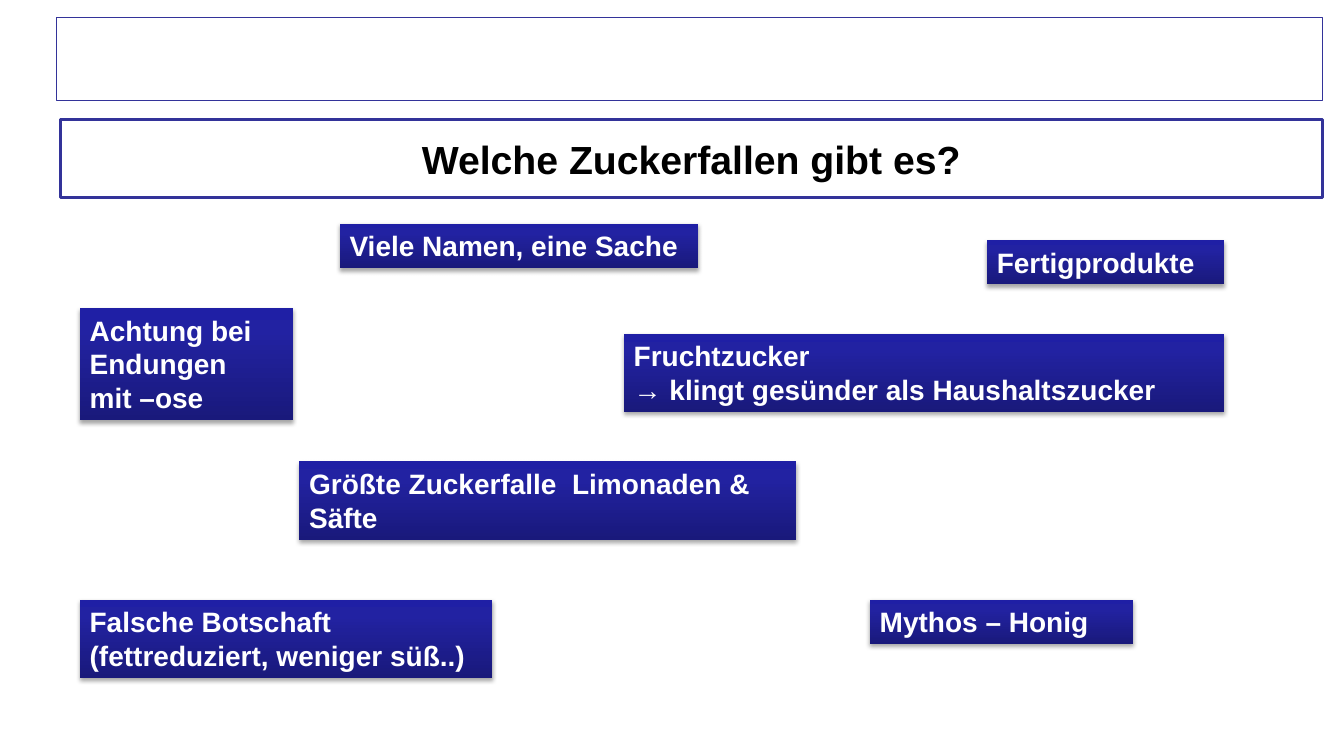
import copy
import dataclasses

import lxml.etree
import pptx
import pptx.dml.color
import pptx.enum.shapes
import pptx.enum.text
import pptx.oxml.ns
import pptx.shapes.autoshape
import pptx.slide
import pptx.util

COLOURS = {
    "white": "FFFFFF",
    "black": "000000",
    "border": "333399",
    "dark": "19197B",
    "middle": "2222A2",
    "light": "1F1FA5",
}
GRADIENT = ((0, "dark"), (0.8, "middle"), (1, "light"))
LINE_HEIGHT = 0.85
VERTICAL_PADDING = 0.27


@dataclasses.dataclass(frozen=True)
class SugarTrap:
    left: float
    top: float
    width: float
    lines: int
    paragraphs: tuple[str, ...]


SUGAR_TRAPS = (
    SugarTrap(7.54, 11.63, 12.52, 2, ("Größte Zuckerfalle  Limonaden & Säfte",)),
    SugarTrap(8.56, 5.64, 9.04, 1, ("Viele Namen, eine Sache",)),
    SugarTrap(2.01, 7.77, 5.38, 3, ("Achtung bei Endungen", "mit –ose")),
    SugarTrap(2.01, 15.11, 10.39, 2, ("Falsche Botschaft (fettreduziert, weniger süß..)",)),
    SugarTrap(24.87, 6.05, 5.99, 1, ("Fertigprodukte",)),
    SugarTrap(21.92, 15.11, 6.63, 1, ("Mythos – Honig",)),
    SugarTrap(15.72, 8.41, 15.14, 2, ("Fruchtzucker", "→ klingt gesünder als Haushaltszucker")),
)


def colour(name: str) -> pptx.dml.color.RGBColor:
    return pptx.dml.color.RGBColor.from_string(COLOURS[name])


def add_box(
    page: pptx.slide.Slide, left: float, top: float, width: float, height: float
) -> pptx.shapes.autoshape.Shape:
    box = page.shapes.add_shape(
        pptx.enum.shapes.MSO_SHAPE.RECTANGLE,
        *(pptx.util.Cm(length) for length in (left, top, width, height)),
    )
    box.shadow.inherit = False
    box.fill.background()
    box.line.fill.background()
    return box


def set_border(box: pptx.shapes.autoshape.Shape, points: float) -> None:
    box.line.color.rgb = colour("border")
    box.line.width = pptx.util.Pt(points)


def write_text(
    box: pptx.shapes.autoshape.Shape,
    paragraphs: tuple[str, ...],
    size: int,
    font_colour: str,
    alignment: pptx.enum.text.PP_ALIGN,
    frame_format: dict[str, object],
) -> None:
    frame = box.text_frame
    for name, value in {"word_wrap": True, **frame_format}.items():
        setattr(frame, name, value)
    font_format = {"name": "Arial", "size": pptx.util.Pt(size), "bold": True}
    for index, text in enumerate(paragraphs):
        para = frame.paragraphs[0] if index == 0 else frame.add_paragraph()
        para.alignment = alignment
        span = para.add_run()
        span.text = text
        for name, value in font_format.items():
            setattr(span.font, name, value)
        span.font.color.rgb = colour(font_colour)


def fill_gradient(box: pptx.shapes.autoshape.Shape) -> None:
    box.fill.gradient()
    box.fill.gradient_angle = 90
    stop_list = box.fill._xPr.find(".//" + pptx.oxml.ns.qn("a:gsLst"))
    stop_list.append(copy.deepcopy(stop_list[-1]))
    for stop, (position, name) in zip(box.fill.gradient_stops, GRADIENT):
        stop.position = position
        stop.color.rgb = colour(name)


def add_shadow(box: pptx.shapes.autoshape.Shape) -> None:
    qn = pptx.oxml.ns.qn
    effects = box._element.spPr.find(qn("a:effectLst"))
    shadow = lxml.etree.SubElement(
        effects,
        qn("a:outerShdw"),
        blurRad=str(pptx.util.Pt(3.1)),
        dist=str(pptx.util.Pt(1.8)),
        dir="5400000",
        rotWithShape="0",
    )
    tint = lxml.etree.SubElement(shadow, qn("a:srgbClr"), val=COLOURS["black"])
    lxml.etree.SubElement(tint, qn("a:alpha"), val="35000")


def add_sugar_trap(page: pptx.slide.Slide, trap: SugarTrap) -> None:
    height = VERTICAL_PADDING + LINE_HEIGHT * trap.lines
    box = add_box(page, trap.left, trap.top, trap.width, height)
    fill_gradient(box)
    add_shadow(box)
    write_text(
        box, trap.paragraphs, 20, "white", pptx.enum.text.PP_ALIGN.LEFT,
        {
            "vertical_anchor": pptx.enum.text.MSO_ANCHOR.TOP,
            "auto_size": pptx.enum.text.MSO_AUTO_SIZE.SHAPE_TO_FIT_TEXT,
        },
    )


def main() -> None:
    deck = pptx.Presentation()
    deck.slide_width = pptx.util.Cm(33.87)
    deck.slide_height = pptx.util.Cm(19.05)
    page = deck.slides.add_slide(deck.slide_layouts[6])

    header = add_box(page, 1.42, 0.43, 31.9, 2.11)
    set_border(header, 0.75)

    title = add_box(page, 1.52, 3.02, 31.8, 1.96)
    title.fill.solid()
    title.fill.fore_color.rgb = colour("white")
    set_border(title, 2)
    write_text(
        title, ("Welche Zuckerfallen gibt es?",), 28, "black",
        pptx.enum.text.PP_ALIGN.CENTER,
        {"vertical_anchor": pptx.enum.text.MSO_ANCHOR.MIDDLE},
    )

    for trap in SUGAR_TRAPS:
        add_sugar_trap(page, trap)

    deck.save("out.pptx")


if __name__ == "__main__":
    main()
